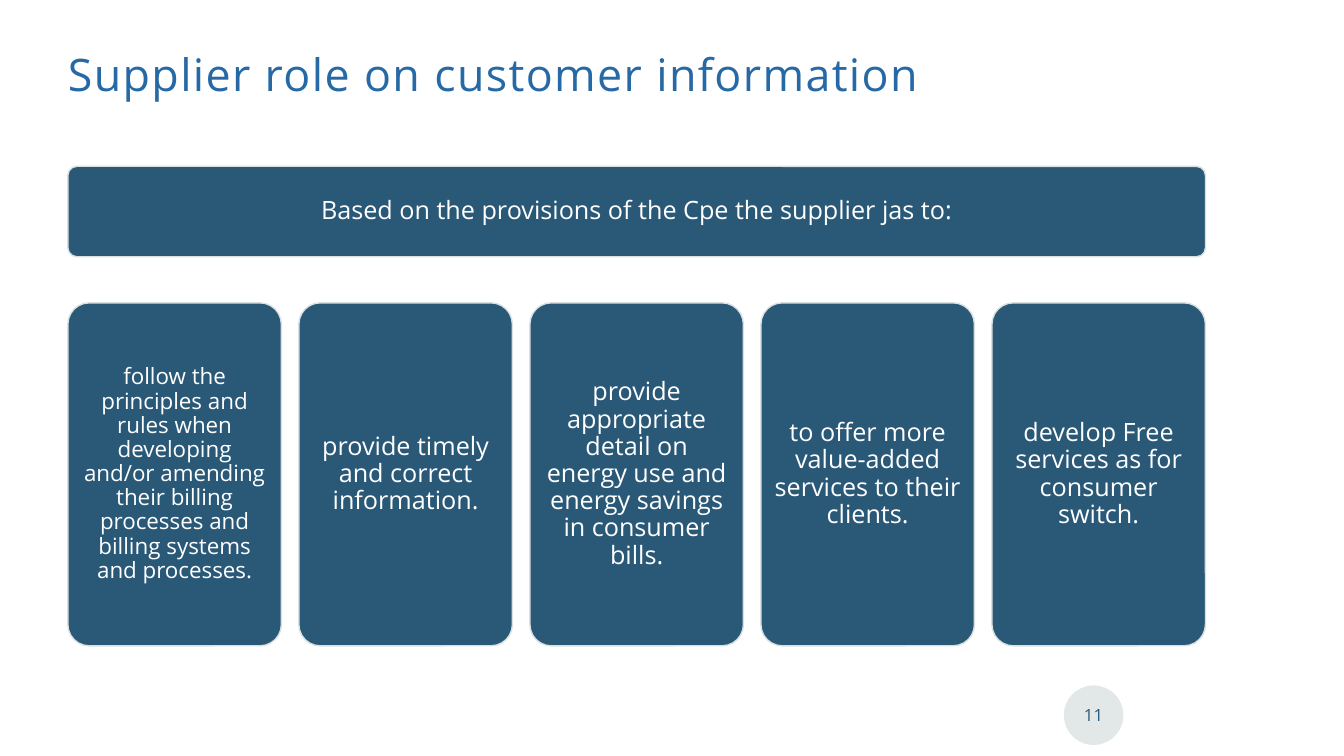
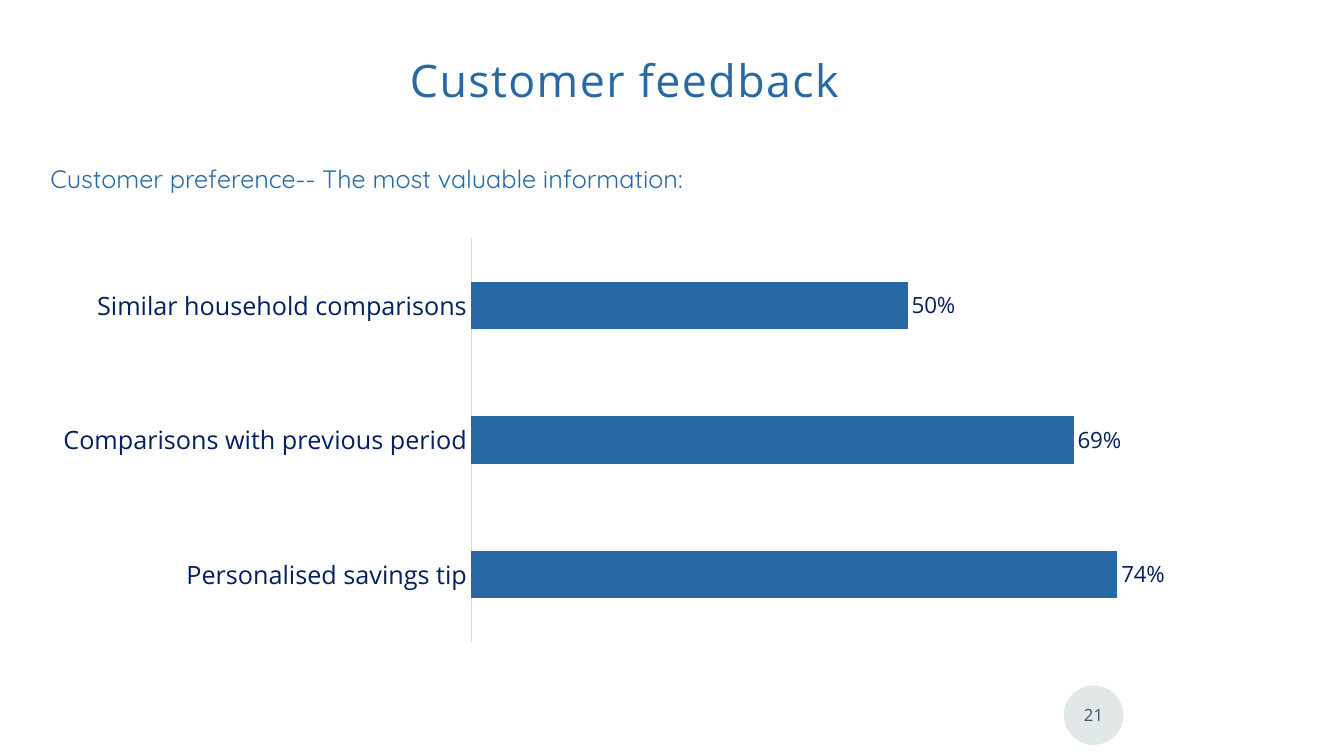
import pptx
import pptx.chart.data
import pptx.dml.color
import pptx.enum.chart
import pptx.enum.shapes
import pptx.enum.text
import pptx.oxml
import pptx.oxml.ns
import pptx.util

Pt = pptx.util.Pt
SHAPE = pptx.enum.shapes.MSO_SHAPE
ALIGN = pptx.enum.text.PP_ALIGN
ANCHOR = pptx.enum.text.MSO_ANCHOR

COLORS = {
    "title": "2669A5",
    "panel": "2A5978",
    "pale": "D9E0E1",
    "navy": "002060",
    "axis": "D9D9D9",
    "white": "FFFFFF",
}
FONT = "Open Sans"
ACCENT_FONT = "Quicksand"


def rgb(name):
    return pptx.dml.color.RGBColor.from_string(COLORS[name])


def style_font(font, size, color, name=FONT):
    font.size = Pt(size)
    font.name = name
    font.color.rgb = rgb(color)


def write_text(shape, text, size=18, color="white", font=FONT, align=ALIGN.CENTER,
               anchor=ANCHOR.MIDDLE, inset=0, line_spacing=None, tracking=None):
    frame = shape.text_frame
    frame.word_wrap = True
    frame.vertical_anchor = anchor
    frame.margin_left = frame.margin_right = Pt(inset)
    frame.margin_top = frame.margin_bottom = Pt(inset)
    paragraph = frame.paragraphs[0]
    paragraph.alignment = align
    if line_spacing:
        paragraph.line_spacing = line_spacing
    run = paragraph.add_run()
    run.text = text
    style_font(run.font, size, color, font)
    if tracking:
        run.font._element.set("spc", str(tracking * 100))


class Deck:
    def __init__(self):
        self.presentation = pptx.Presentation()
        self.presentation.slide_width = Pt(960.48)
        self.presentation.slide_height = Pt(540)
        self.slide = None

    def add_slide(self, title, number, left, top, align):
        layout = self.presentation.slide_layouts[6]
        self.slide = self.presentation.slides.add_slide(layout)
        self.page_badge(number)
        self.text(title, left, top, 813.6, 65.5, size=32, color="title",
                  align=align, anchor=ANCHOR.TOP, line_spacing=0.9, tracking=1)

    def shape(self, kind, left, top, width, height, fill):
        shape = self.slide.shapes.add_shape(kind, Pt(left), Pt(top), Pt(width), Pt(height))
        shape.shadow.inherit = False
        shape.fill.solid()
        shape.fill.fore_color.rgb = rgb(fill)
        return shape

    def text(self, text, left, top, width, height, **text_format):
        box = self.slide.shapes.add_textbox(Pt(left), Pt(top), Pt(width), Pt(height))
        write_text(box, text, **text_format)

    def page_badge(self, number):
        badge = self.shape(SHAPE.OVAL, 760.3, 489.6, 42.5, 42.5, "pale")
        badge.line.fill.background()
        color = badge.fill._xPr.find(".//" + pptx.oxml.ns.qn("a:srgbClr"))
        color.append(pptx.oxml.parse_xml(
            f'<a:alpha {pptx.oxml.ns.nsdecls("a")} val="75000"/>'))
        write_text(badge, str(number), size=12, color="panel")

    def panel(self, text, left, top, width, height, size=18):
        panel = self.shape(SHAPE.ROUNDED_RECTANGLE, left, top, width, height, "panel")
        panel.adjustments[0] = 0.1
        panel.line.color.rgb = rgb("pale")
        panel.line.width = Pt(1)
        write_text(panel, text, size=size, inset=5.2, line_spacing=0.9)

    def bar_chart(self, values, left, top, width, height):
        data = pptx.chart.data.CategoryChartData(number_format="0%")
        data.categories = list(values)
        data.add_series("Series 1", list(values.values()))
        chart = self.slide.shapes.add_chart(
            pptx.enum.chart.XL_CHART_TYPE.BAR_CLUSTERED,
            Pt(left), Pt(top), Pt(width), Pt(height), data).chart
        chart.has_legend = False
        chart.has_title = False
        chart.font.name = ACCENT_FONT
        chart.font.size = Pt(10)

        categories = chart.category_axis
        categories.major_tick_mark = pptx.enum.chart.XL_TICK_MARK.NONE
        categories.format.line.color.rgb = rgb("axis")
        categories.format.line.width = Pt(0.75)
        style_font(categories.tick_labels.font, 18, "navy")

        scale = chart.value_axis
        scale.visible = False
        scale.has_major_gridlines = False
        scale.minimum_scale = 0
        scale.maximum_scale = 0.8

        plot = chart.plots[0]
        plot.gap_width = 182
        plot.vary_by_categories = False
        bars = plot.series[0].format.fill
        bars.solid()
        bars.fore_color.rgb = rgb("title")
        plot.has_data_labels = True
        labels = plot.data_labels
        labels.show_value = True
        labels.number_format = "0%"
        labels.number_format_is_linked = False
        labels.position = pptx.enum.chart.XL_LABEL_POSITION.OUTSIDE_END
        style_font(labels.font, 16, "navy")


def build_supplier_slide(deck):
    left, width, card_width = 48.5, 813, 152.6
    duties = [
        ("follow the principles and rules when developing and/or amending "
         "their billing processes and billing systems and processes.", 16),
        ("provide timely and correct information.", 18),
        ("provide appropriate detail on energy use and energy savings "
         "in consumer bills.", 18),
        ("to offer more value-added services to their clients.", 18),
        ("develop Free services as for consumer switch.", 18),
    ]
    deck.add_slide("Supplier role on customer information", 11, 48.5, 37.4, ALIGN.LEFT)
    deck.panel("Based on the provisions of the Cpe the supplier jas to:",
               left, 118.8, width, 64.6)
    step = (width - card_width) / (len(duties) - 1)
    for index, (duty, size) in enumerate(duties):
        deck.panel(duty, left + index * step, 216.3, card_width, 245, size)


def build_feedback_slide(deck):
    deck.add_slide("Customer feedback", 21, 39.6, 41.8, ALIGN.CENTER)
    deck.bar_chart({
        "Personalised savings tip": 0.74,
        "Comparisons with previous period": 0.69,
        "Similar household comparisons": 0.5,
    }, 28.8, 164.2, 823.7, 300.2)
    deck.text("Customer preference-- The most valuable information:",
              36, 116.6, 558, 22.5, color="title", font=ACCENT_FONT,
              align=ALIGN.LEFT, anchor=ANCHOR.TOP)


def main():
    deck = Deck()
    build_supplier_slide(deck)
    build_feedback_slide(deck)
    deck.presentation.save("out.pptx")


if __name__ == "__main__":
    main()
